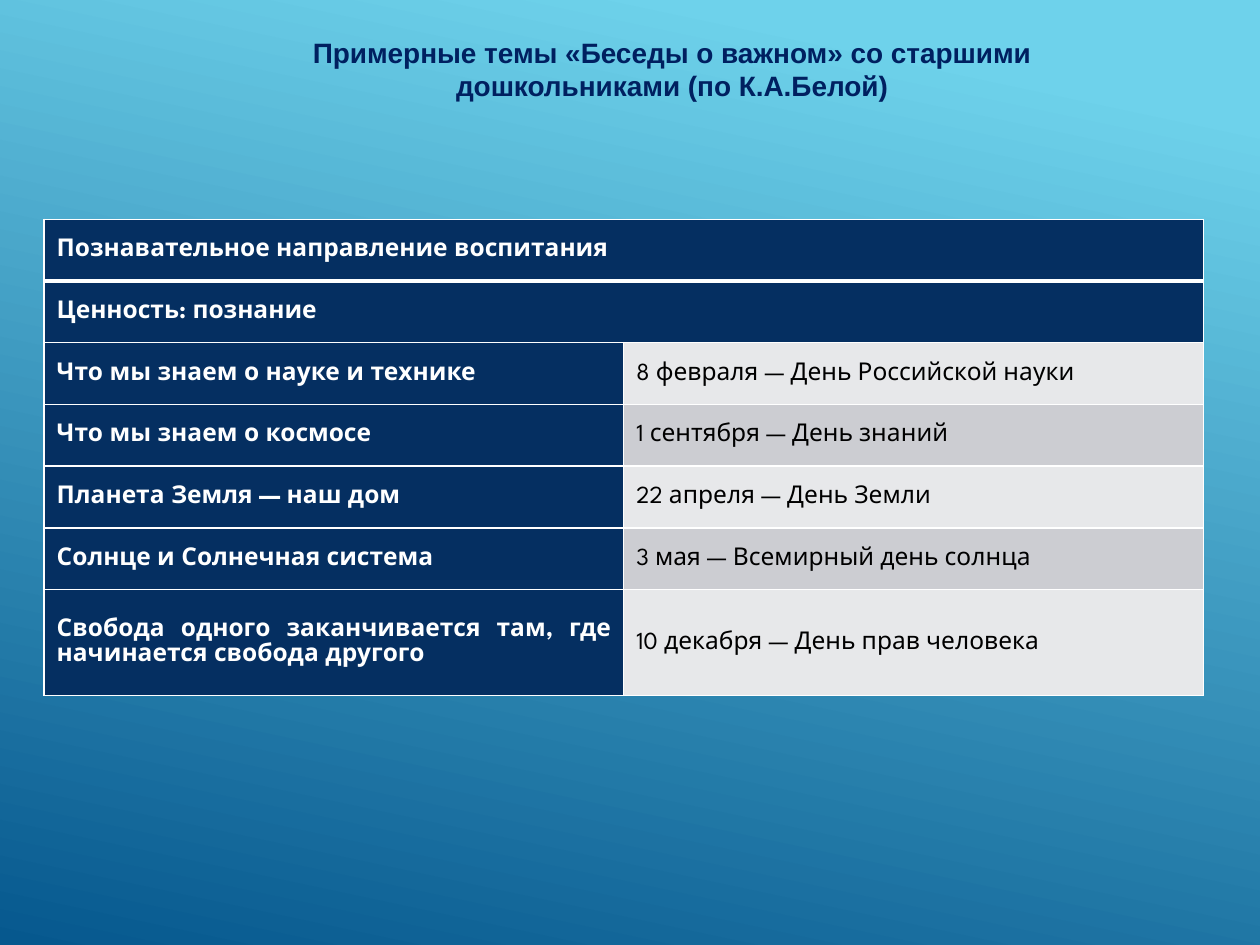
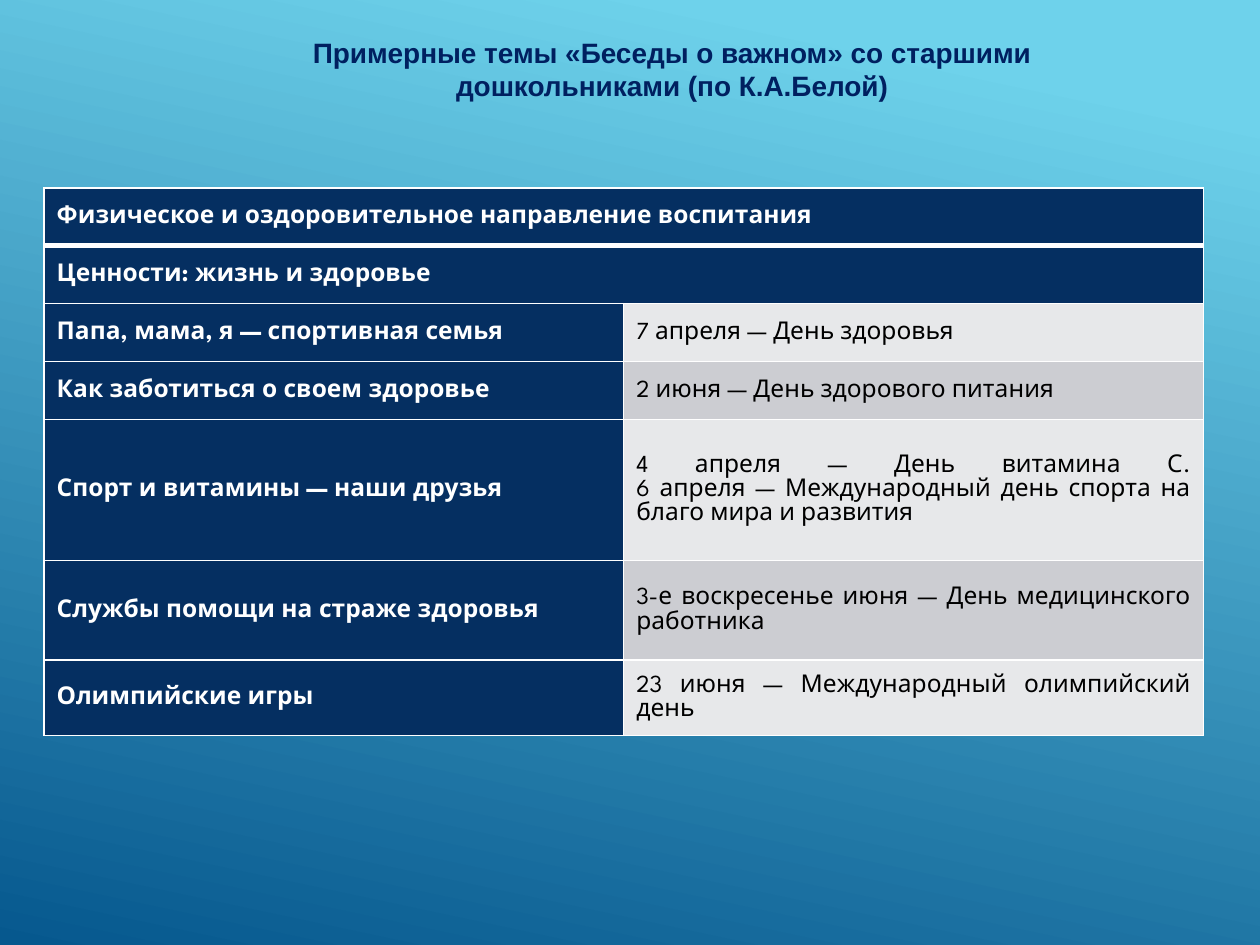
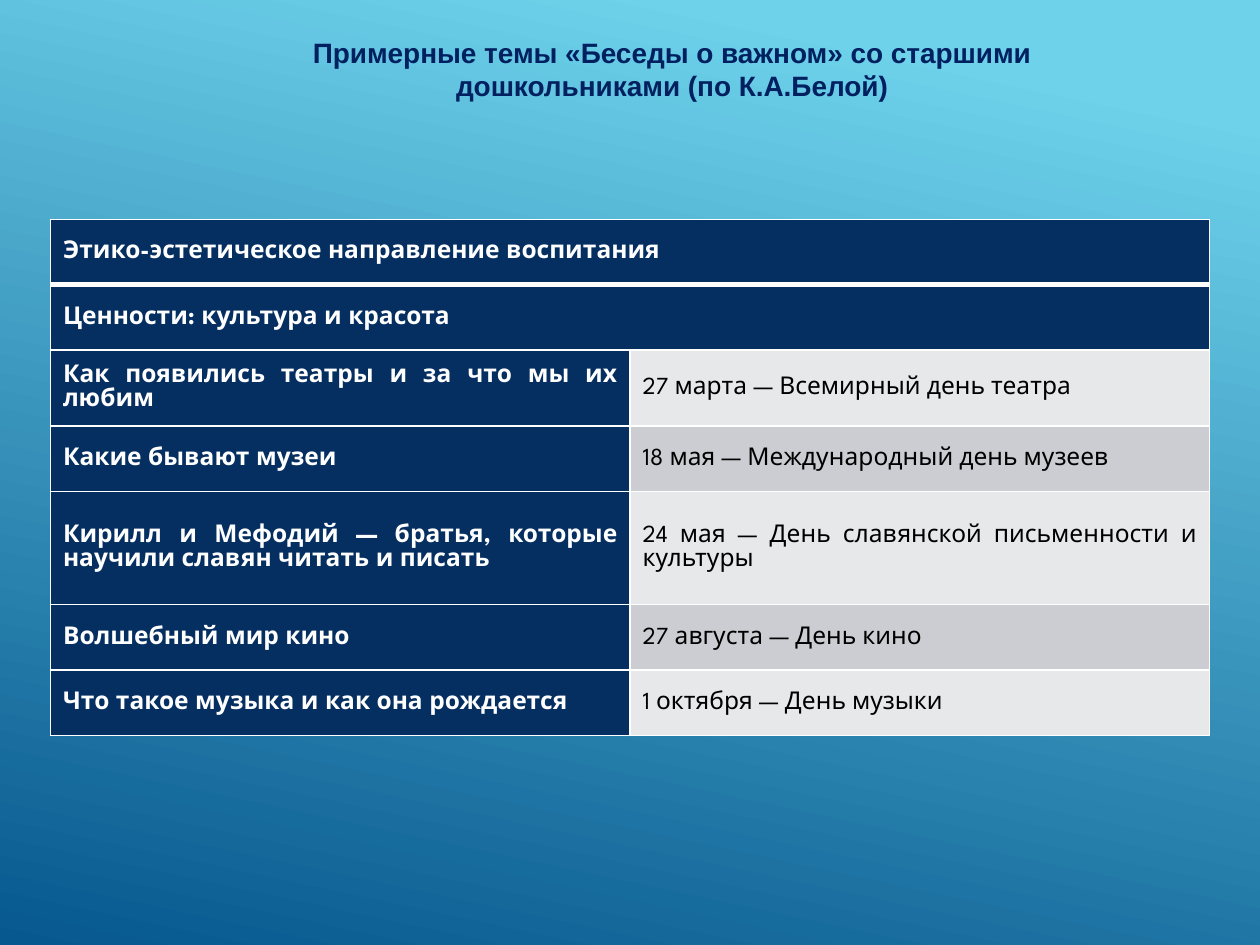
from copy import deepcopy

from pptx import Presentation
from pptx.dml.color import RGBColor
from pptx.enum.text import MSO_ANCHOR, MSO_AUTO_SIZE, PP_ALIGN
from pptx.oxml import parse_xml
from pptx.oxml.ns import nsdecls, qn
from pptx.util import Inches, Pt

TOP, MIDDLE = MSO_ANCHOR.TOP, MSO_ANCHOR.MIDDLE
CENTER, JUSTIFY = PP_ALIGN.CENTER, PP_ALIGN.JUSTIFY
GROW = MSO_AUTO_SIZE.SHAPE_TO_FIT_TEXT

WIDTH, HEIGHT = Inches(10), Inches(7.5)
COLORS = {
    "sky": "6ED2EB",
    "sea": "06588E",
    "title": "002060",
    "navy": "052F61",
    "white": "FFFFFF",
    "black": "000000",
    "light": "E7E8EA",
    "grey": "CCCDD2",
}
TITLE = "Примерные темы «Беседы о важном» со старшими дошкольниками (по К.А.Белой)"
COLUMN_SHARE = 0.46
HEADING_ROWS = 2

SECTIONS = [
    {
        "left": 0.35, "top": 1.74, "row": 0.49, "tall": {6: 0.84},
        "headings": ["Познавательное направление воспитания", "Ценность: познание"],
        "topics": [
            ("Что мы знаем о науке и технике", "8 февраля — День Российской науки"),
            ("Что мы знаем о космосе", "1 сентября — День знаний"),
            ("Планета Земля — наш дом", "22 апреля — День Земли"),
            ("Солнце и Солнечная система", "3 мая — Всемирный день солнца"),
            ("Свобода одного заканчивается там, где начинается свобода другого",
             "10 декабря — День прав человека"),
        ],
    },
    {
        "left": 0.35, "top": 1.49, "row": 0.46, "tall": {4: 1.12, 5: 0.79},
        "headings": ["Физическое и оздоровительное направление воспитания",
                     "Ценности: жизнь и здоровье"],
        "topics": [
            ("Папа, мама, я — спортивная семья", "7 апреля — День здоровья"),
            ("Как заботиться о своем здоровье", "2 июня — День здорового питания"),
            ("Спорт и витамины — наши друзья",
             "4 апреля — День витамина С.\n"
             "6 апреля — Международный день спорта на благо мира и развития"),
            ("Службы помощи на страже здоровья",
             "3-е воскресенье июня — День медицинского работника"),
            ("Олимпийские игры", "23 июня — Международный олимпийский день"),
        ],
    },
    {
        "left": 0.4, "top": 1.74, "row": 0.52, "tall": {4: 0.9},
        "headings": ["Этико-эстетическое направление воспитания",
                     "Ценности: культура и красота"],
        "topics": [
            ("Как появились театры и за что мы их любим",
             "27 марта — Всемирный день театра"),
            ("Какие бывают музеи", "18 мая — Международный день музеев"),
            ("Кирилл и Мефодий — братья, которые научили славян читать и писать",
             "24 мая — День славянской письменности и культуры"),
            ("Волшебный мир кино", "27 августа — День кино"),
            ("Что такое музыка и как она рождается", "1 октября — День музыки"),
        ],
    },
]


def rgb(name):
    return RGBColor.from_string(COLORS[name])


def write(frame, text, *, font, size, color, bold, align, spacing=1.0, before=0, after=0):
    paragraph = frame.paragraphs[0]
    paragraph.text = text
    paragraph.alignment = align
    paragraph.line_spacing = spacing
    paragraph.space_before = Pt(before)
    paragraph.space_after = Pt(after)
    for run in paragraph.runs:
        run.font.name = font
        run.font.size = Pt(size)
        run.font.bold = bold
        run.font.color.rgb = rgb(color)
    for line_break in paragraph._p.findall(qn("a:br")):
        line_break.append(deepcopy(paragraph.runs[0]._r.rPr))


def paint_background(master):
    fill = master.background.fill
    fill.gradient()
    fill.gradient_angle = 360 - 102
    for stop, (position, color) in zip(fill.gradient_stops, [(0.1, "sky"), (1, "sea")]):
        stop.position = position
        stop.color.rgb = rgb(color)


def place_title(slide):
    title = slide.shapes.title
    title.left, title.top = Inches(1.83), Inches(0.25)
    title.width, title.height = Inches(7.01), Inches(0.57)
    frame = title.text_frame
    frame.margin_left = frame.margin_right = frame.margin_bottom = 0
    frame.margin_top = Inches(0.03)
    frame.vertical_anchor = TOP
    frame.word_wrap = True
    frame.auto_size = GROW
    write(frame, TITLE, font="Arial", size=16, color="title", bold=True,
          align=CENTER, before=2)


def outline_cell(cell, top=1, bottom=1):
    properties = cell._tc.get_or_add_tcPr()
    for side, points in (("L", 1), ("R", 1), ("T", top), ("B", bottom)):
        properties.append(parse_xml(
            f'<a:ln{side} {nsdecls("a")} w="{Pt(points)}"><a:solidFill>'
            f'<a:srgbClr val="{COLORS["white"]}"/></a:solidFill></a:ln{side}>'))


def fill_cell(cell, text, background, color, bold):
    cell.fill.solid()
    cell.fill.fore_color.rgb = rgb(background)
    cell.vertical_anchor = MIDDLE
    cell.margin_left = cell.margin_right = Inches(0.1)
    cell.margin_top = cell.margin_bottom = Inches(0.05)
    write(cell.text_frame, text, font="League Spartan", size=14, color=color,
          bold=bold, align=JUSTIFY, spacing=1.07, after=8)


def add_topics_table(slide, section):
    row_count = HEADING_ROWS + len(section["topics"])
    heights = [Inches(section["tall"].get(i, section["row"])) for i in range(row_count)]
    column = int(WIDTH * COLUMN_SHARE)
    table = slide.shapes.add_table(
        row_count, 2, Inches(section["left"]), Inches(section["top"]),
        2 * column, sum(heights)).table
    table.first_row = table.horz_banding = False
    for index, height in enumerate(heights):
        table.rows[index].height = height
        for cell in table.rows[index].cells:
            outline_cell(cell, top=3 if index == 1 else 1, bottom=3 if index == 0 else 1)
    for index, heading in enumerate(section["headings"]):
        table.cell(index, 0).merge(table.cell(index, 1))
        fill_cell(table.cell(index, 0), heading, "navy", "white", True)
    for index, (topic, date) in enumerate(section["topics"], HEADING_ROWS):
        fill_cell(table.cell(index, 0), topic, "navy", "white", True)
        fill_cell(table.cell(index, 1), date, "grey" if index % 2 else "light", "black", False)


def main():
    deck = Presentation()
    deck.slide_width, deck.slide_height = WIDTH, HEIGHT
    paint_background(deck.slide_master)
    title_only = deck.slide_layouts.get_by_name("Title Only")
    for section in SECTIONS:
        slide = deck.slides.add_slide(title_only)
        place_title(slide)
        add_topics_table(slide, section)
    deck.save("out.pptx")


if __name__ == "__main__":
    main()
